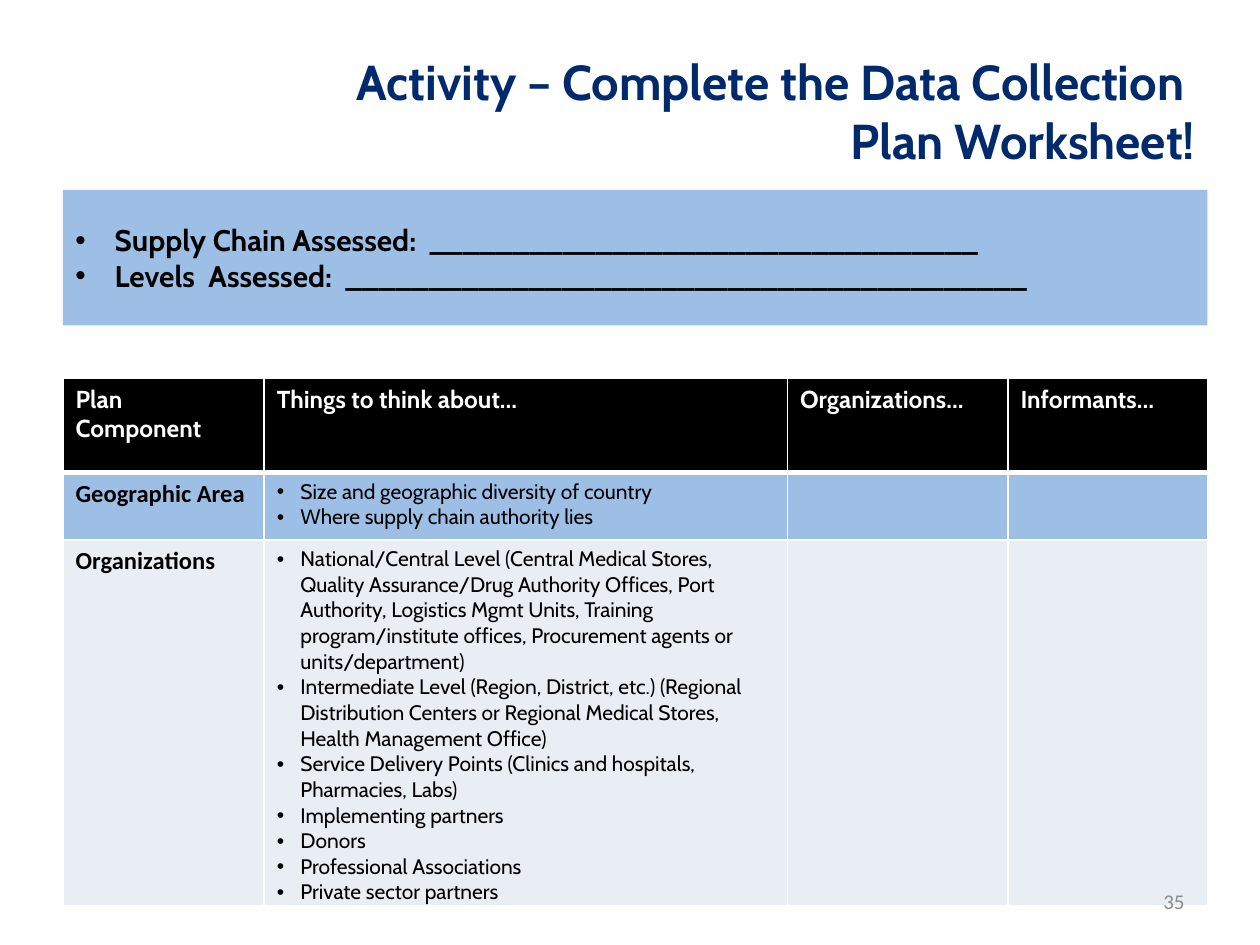
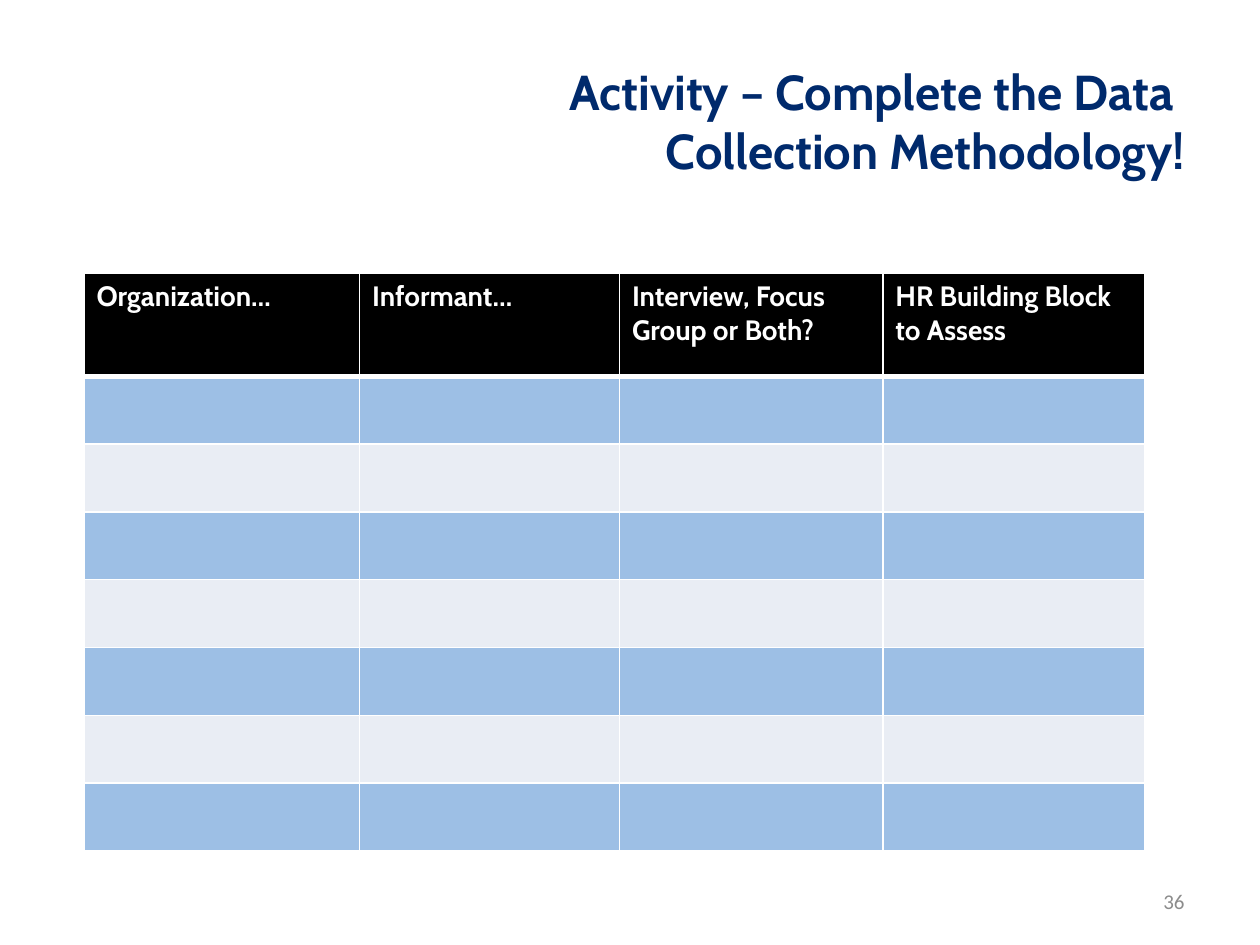
from lxml import etree
from pptx import Presentation
from pptx.dml.color import RGBColor
from pptx.enum.shapes import MSO_SHAPE
from pptx.enum.text import MSO_ANCHOR, PP_ALIGN
from pptx.oxml.ns import qn
from pptx.util import Pt

LEFT, RIGHT = PP_ALIGN.LEFT, PP_ALIGN.RIGHT
MIDDLE = MSO_ANCHOR.MIDDLE
RECT = MSO_SHAPE.ROUNDED_RECTANGLE

COLORS = {
    "navy": "002A6C",
    "sky": "9DBFE5",
    "pale": "E9EDF4",
    "black": "000000",
    "white": "FFFFFF",
    "gray": "8C8C8C",
}

HEADS = ["Plan Component", "Things to think about…", "Organizations…", "Informants…"]
PLAN = [
    ("Geographic Area", [
        "Size and geographic diversity of country",
        "Where supply chain authority lies",
    ]),
    ("Organizations", [
        "National/Central Level (Central Medical Stores, Quality Assurance/Drug "
        "Authority Offices, Port Authority, Logistics Mgmt Units, Training "
        "program/institute offices, Procurement agents or units/department)",
        "Intermediate Level (Region, District, etc.) (Regional Distribution Centers "
        "or Regional Medical Stores, Health Management Office)",
        "Service Delivery Points (Clinics and hospitals, Pharmacies, Labs)",
        "Implementing partners",
        "Donors",
        "Professional Associations",
        "Private sector partners",
    ]),
]
METHOD = ["Organization…", "Informant…", "Interview, Focus Group or Both?",
          "HR Building Block to Assess"]


def rgb(name):
    return RGBColor.from_string(COLORS[name])


def paint(item, color):
    item.fill.solid()
    item.fill.fore_color.rgb = rgb(color)


def bullet(para, indent):
    props = para._p.get_or_add_pPr()
    props.set("marL", str(Pt(indent)))
    props.set("indent", str(-Pt(indent)))
    etree.SubElement(props, qn("a:buFont"), typeface="Arial")
    etree.SubElement(props, qn("a:buChar"), char="•")


def write(frame, lines, size, color="black", bold=False, font="Cabin",
          align=LEFT, indent=0):
    frame.word_wrap = True
    for i, line in enumerate(lines):
        para = frame.add_paragraph() if i else frame.paragraphs[0]
        para.alignment = align
        if indent:
            bullet(para, indent)
        for j, part in enumerate(line.split("\n")):
            if j:
                para.add_line_break()
            run = para.add_run()
            run.text = part
            run.font.size = Pt(size)
            run.font.name = font
            run.font.bold = bold
            run.font.color.rgb = rgb(color)


def add_text(slide, box, text, size, color, **style):
    frame = slide.shapes.add_textbox(*map(Pt, box)).text_frame
    frame.vertical_anchor = MIDDLE
    write(frame, [text], size, color, align=RIGHT, **style)


def add_title(slide, box, text):
    add_text(slide, box, text, 28, "navy", bold=True)


def add_page(slide, num):
    add_text(slide, (516, 500.4, 168, 28.8), str(num), 12, "gray", font="Calibri")


def add_band(slide, box, lines):
    band = slide.shapes.add_shape(RECT, *map(Pt, box))
    band.adjustments[0] = 0
    band.shadow.inherit = False
    band.line.fill.background()
    paint(band, "sky")
    band.text_frame.vertical_anchor = MIDDLE
    write(band.text_frame, lines, 17, bold=True, indent=22.5)


def add_edges(cell, row):
    widths = {"L": 1, "R": 1, "T": 3 if row == 1 else 1, "B": 1 if row else 3}
    props = cell._tc.get_or_add_tcPr()
    for side, width in widths.items():
        edge = etree.SubElement(props, qn(f"a:ln{side}"), w=str(Pt(width)))
        fill = etree.SubElement(edge, qn("a:solidFill"))
        etree.SubElement(fill, qn("a:srgbClr"), val=COLORS["white"])


def add_grid(slide, left, top, cols, rows, heads, size):
    box = (left, top, sum(cols), sum(rows))
    grid = slide.shapes.add_table(len(rows), len(cols), *map(Pt, box)).table
    for col, width in zip(grid.columns, cols):
        col.width = Pt(width)
    for i, height in enumerate(rows):
        grid.rows[i].height = Pt(height)
        for cell in grid.rows[i].cells:
            add_edges(cell, i)
            paint(cell, ("sky" if i % 2 else "pale") if i else "black")
    for cell, head in zip(grid.rows[0].cells, heads):
        write(cell.text_frame, [head], size, "white", bold=True)
    return grid


def add_plan(slide):
    add_title(slide, (24, 18, 666, 90),
              "Activity – Complete the Data Collection \nPlan Worksheet!")
    add_band(slide, (36, 108.5, 654, 77.5), [
        "Supply Chain Assessed:  " + "_" * 33,
        "Levels  Assessed:  " + "_" * 41,
    ])
    grid = add_grid(slide, 36, 216, (115, 299, 126, 114), (54, 38.5, 207.5), HEADS, 14)
    for i, (name, notes) in enumerate(PLAN, 1):
        write(grid.cell(i, 0).text_frame, [name], 14, bold=True, font="Calibri")
        write(grid.cell(i, 1).text_frame, notes, 12, indent=13.5)
    add_page(slide, 35)


def add_method(slide):
    add_title(slide, (36, 24, 648, 90),
              "Activity – Complete the Data \nCollection Methodology!")
    add_grid(slide, 48, 156, (157.5, 148.5, 150.5, 149.5), [59] + [38.75] * 7, METHOD, 16)
    add_page(slide, 36)


def main():
    deck = Presentation()
    deck.slide_width, deck.slide_height = Pt(720), Pt(540)
    for build in (add_plan, add_method):
        build(deck.slides.add_slide(deck.slide_layouts[6]))
    deck.save("out.pptx")


if __name__ == "__main__":
    main()
